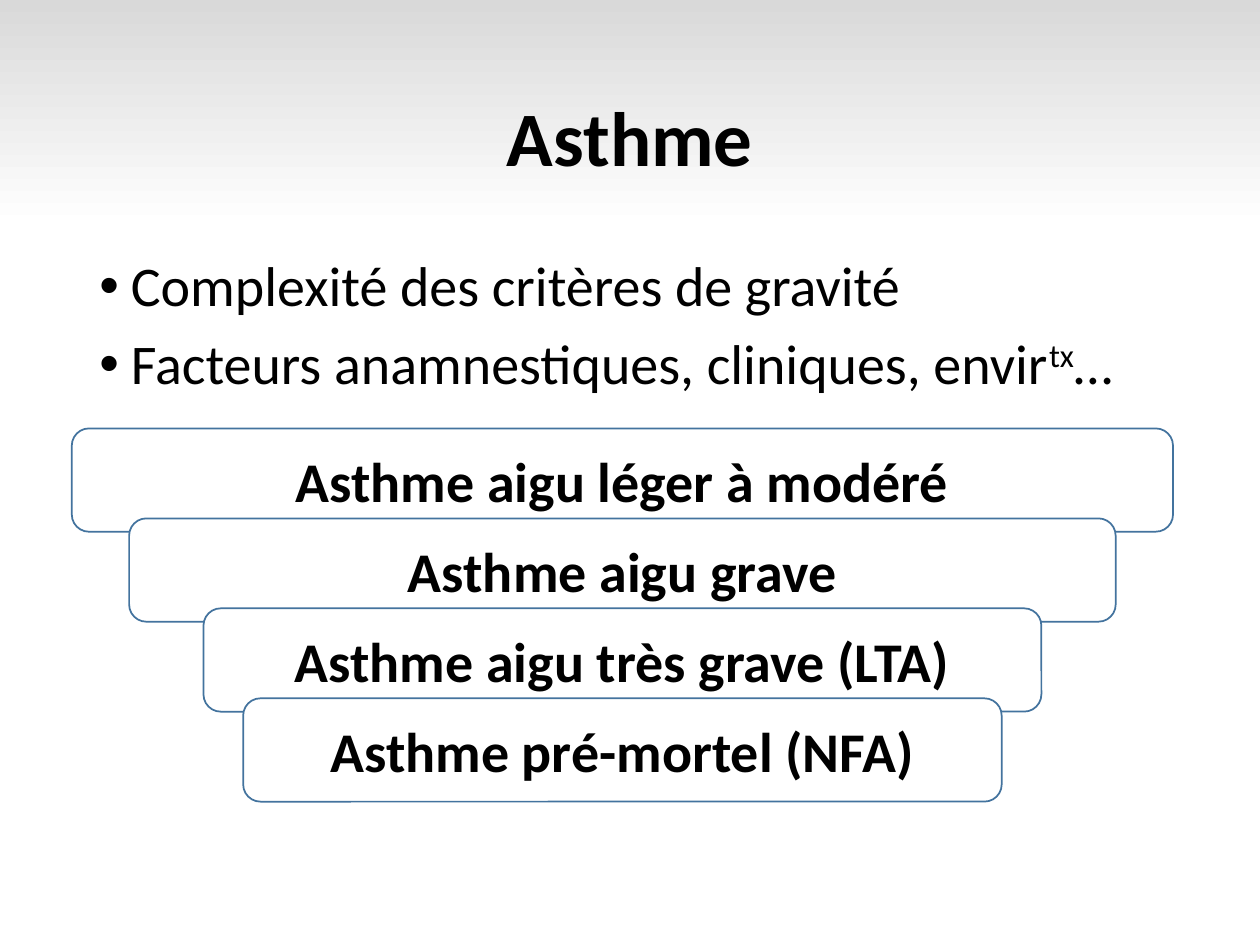
from lxml.etree import SubElement
from pptx import Presentation
from pptx.dml.color import RGBColor
from pptx.enum.shapes import MSO_SHAPE
from pptx.enum.text import MSO_ANCHOR, PP_ALIGN
from pptx.oxml.ns import qn
from pptx.util import Inches, Pt

BLACK, WHITE, GREY, BLUE = "000000", "FFFFFF", "D9D9D9", "43739E"
LEFT, TEXT_WIDTH = 0.69, 8.62
BOX_CENTER, BOX_TOP, BOX_STEP, BOX_HEIGHT = 4.94, 3.4, 0.714, 0.82
BULLETS = [
    [("Complexité des critères de gravité", 0)],
    [("Facteurs anamnestiques, cliniques, envir", 0), ("tx", 30), ("…", 0)],
]
SEVERITY_LEVELS = [
    ("Asthme aigu léger à modéré", 8.74),
    ("Asthme aigu grave", 7.83),
    ("Asthme aigu très grave (LTA)", 6.65),
    ("Asthme pré-mortel (NFA)", 6.02),
]


def color(value):
    """Return the colour for a hex string."""
    return RGBColor.from_string(value)


def add_text(paragraph, text, size=32, bold=False, align=None, spacing=None, baseline=0):
    """Add a formatted run to a paragraph."""
    run = paragraph.add_run()
    run.text = text
    run.font.name = "Calibri"
    run.font.size = Pt(size)
    run.font.bold = bold
    run.font.color.rgb = color(BLACK)
    if baseline:
        run.font._element.set("baseline", str(baseline * 1000))
    if align is not None:
        paragraph.alignment = align
    if spacing is not None:
        paragraph.line_spacing = spacing


def set_background(slide):
    """Fade the slide background from grey at the top to white."""
    fill = slide.background.fill
    fill.gradient()
    fill.gradient_angle = 270
    for stop, position, value in zip(fill.gradient_stops, (0, 0.24), (GREY, WHITE)):
        stop.position = position
        stop.color.rgb = color(value)


def set_title(slide, text):
    """Place and fill the title placeholder."""
    title = slide.shapes.title
    title.left, title.top = Inches(LEFT), Inches(0.4)
    title.width, title.height = Inches(TEXT_WIDTH), Inches(1.45)
    title.text_frame.vertical_anchor = MSO_ANCHOR.MIDDLE
    add_text(title.text_frame.paragraphs[0], text, size=44, bold=True,
             align=PP_ALIGN.CENTER, spacing=0.9)


def set_bullet(paragraph):
    """Give a paragraph a hanging round bullet."""
    properties = paragraph._p.get_or_add_pPr()
    properties.set("marL", str(Inches(0.25)))
    properties.set("indent", str(-Inches(0.25)))
    SubElement(properties, qn("a:buFont")).set("typeface", "Arial")
    SubElement(properties, qn("a:buChar")).set("char", "•")


def add_bullets(slide, bullets):
    """Add the bulleted list below the title."""
    box = slide.shapes.add_textbox(Inches(LEFT), Inches(2), Inches(TEXT_WIDTH), Inches(1.57))
    frame = box.text_frame
    frame.word_wrap = True
    for index, runs in enumerate(bullets):
        paragraph = frame.add_paragraph() if index else frame.paragraphs[0]
        paragraph.space_before = Pt(10)
        for text, baseline in runs:
            add_text(paragraph, text, spacing=0.9, baseline=baseline)
        set_bullet(paragraph)


def add_level(slide, text, top, width):
    """Add one centred severity box."""
    shape = slide.shapes.add_shape(
        MSO_SHAPE.ROUNDED_RECTANGLE, Inches(BOX_CENTER - width / 2), Inches(top),
        Inches(width), Inches(BOX_HEIGHT))
    shape.shadow.inherit = False
    shape.fill.solid()
    shape.fill.fore_color.rgb = color(WHITE)
    shape.line.color.rgb = color(BLUE)
    shape.line.width = Pt(1)
    shape.text_frame.vertical_anchor = MSO_ANCHOR.MIDDLE
    add_text(shape.text_frame.paragraphs[0], text, bold=True, align=PP_ALIGN.CENTER)


def main():
    """Build and save the slide."""
    presentation = Presentation()
    presentation.slide_width, presentation.slide_height = Inches(10), Inches(7.5)
    slide = presentation.slides.add_slide(presentation.slide_layouts.get_by_name("Title Only"))
    set_background(slide)
    set_title(slide, "Asthme")
    add_bullets(slide, BULLETS)
    for index, (text, width) in enumerate(SEVERITY_LEVELS):
        add_level(slide, text, BOX_TOP + index * BOX_STEP, width)
    presentation.save("out.pptx")


if __name__ == "__main__":
    main()
